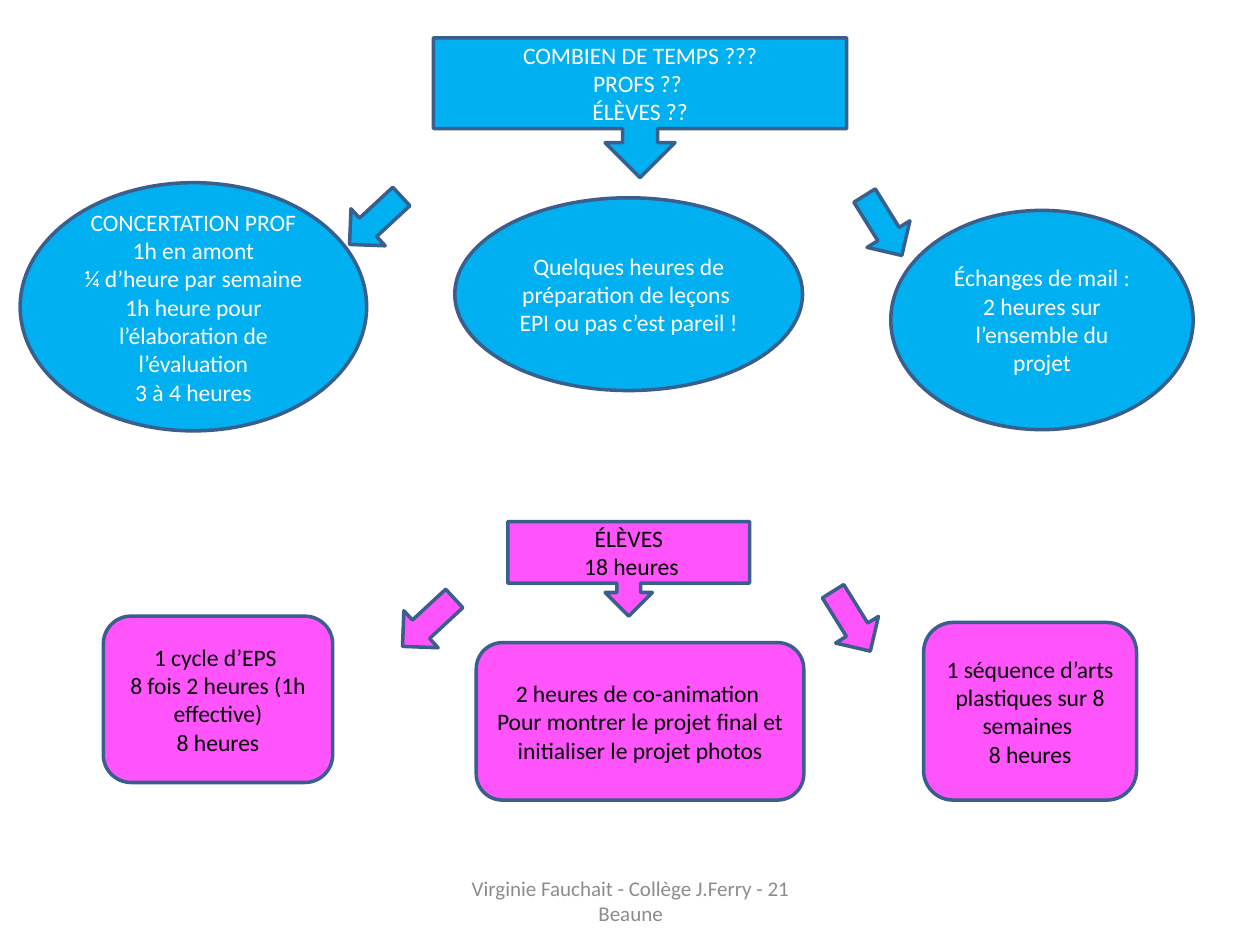
from typing import NamedTuple

import pptx
import pptx.dml.color
import pptx.enum.shapes
import pptx.enum.text
import pptx.util

Inches = pptx.util.Inches
Pt = pptx.util.Pt
Kind = pptx.enum.shapes.MSO_SHAPE

BLUE, PINK, EDGE = "00B0F0", "FF54FC", "3A5F8C"
WHITE, BLACK, GRAY = "FFFFFF", "000000", "8C8C8C"


class Box(NamedTuple):
    kind: Kind
    left: float
    top: float
    width: float
    height: float
    lines: list[str]


class Arrow(NamedTuple):
    left: float
    top: float
    angle: float


class Group(NamedTuple):
    fill: str
    ink: str
    boxes: list[Box]
    arrows: list[Arrow]


GROUPS = [
    Group(BLUE, WHITE, [
        Box(Kind.DOWN_ARROW_CALLOUT, 3.44, 0.3, 3.28, 1.11,
            ["COMBIEN DE TEMPS ???", "PROFS ?? ", "ÉLÈVES ??"]),
        Box(Kind.OVAL, 0.16, 1.45, 2.75, 1.97,
            ["CONCERTATION PROF", "1h en amont", "¼ d’heure par semaine",
             "1h heure pour l’élaboration de l’évaluation", "3 à 4 heures"]),
        Box(Kind.OVAL, 3.61, 1.57, 2.76, 1.53,
            ["Quelques heures de préparation de leçons ",
             "EPI ou pas c’est pareil !"]),
        Box(Kind.OVAL, 7.07, 1.67, 2.4, 1.74,
            ["Échanges de mail :", "2 heures sur l’ensemble du projet"]),
    ], [Arrow(2.78, 1.47, 47.2), Arrow(6.81, 1.51, 328.1)]),
    Group(PINK, BLACK, [
        Box(Kind.DOWN_ARROW_CALLOUT, 4.03, 4.14, 1.92, 0.75,
            ["ÉLÈVES", " 18 heures"]),
        Box(Kind.ROUNDED_RECTANGLE, 0.82, 4.89, 1.82, 1.32,
            ["1 cycle d’EPS ", "8 fois 2 heures (1h effective)", "8 heures"]),
        Box(Kind.ROUNDED_RECTANGLE, 3.78, 5.1, 2.6, 1.25,
            ["2 heures de co-animation ",
             "Pour montrer le projet final et initialiser le projet photos"]),
        Box(Kind.ROUNDED_RECTANGLE, 7.33, 4.94, 1.69, 1.41,
            ["1 séquence d’arts plastiques sur 8 semaines ", "8 heures"]),
    ], [Arrow(3.2, 4.66, 47.2), Arrow(6.56, 4.65, 328.1)]),
]


def paint(color, code: str) -> None:
    color.rgb = pptx.dml.color.RGBColor.from_string(code)


def write(shape, lines: list[str], size: float, ink: str) -> None:
    frame = shape.text_frame
    frame.word_wrap = True
    frame.vertical_anchor = pptx.enum.text.MSO_ANCHOR.MIDDLE
    frame.text = "\n".join(lines)
    for para in frame.paragraphs:
        para.alignment = pptx.enum.text.PP_ALIGN.CENTER
        para.font.name = "Calibri"
        para.font.size = Pt(size)
        paint(para.font.color, ink)


def draw(slide, kind: Kind, place: tuple[float, ...], fill: str):
    """Add a filled, outlined shape at left, top, width, height."""
    shape = slide.shapes.add_shape(kind, *map(Inches, place))
    shape.shadow.inherit = False
    shape.fill.solid()
    paint(shape.fill.fore_color, fill)
    paint(shape.line.color, EDGE)
    shape.line.width = Pt(2)
    return shape


def main() -> None:
    deck = pptx.Presentation()
    deck.slide_width, deck.slide_height = Inches(10), Inches(7.5)
    slide = deck.slides.add_slide(deck.slide_layouts[6])
    for group in GROUPS:
        for box in group.boxes:
            shape = draw(slide, box.kind, box[1:5], group.fill)
            write(shape, box.lines, 13.5, group.ink)
        for arrow in group.arrows:
            place = (arrow.left, arrow.top, 0.4, 0.56)
            draw(slide, Kind.DOWN_ARROW, place, group.fill).rotation = arrow.angle
    footer = slide.shapes.add_textbox(*map(Inches, (3.42, 6.95, 3.17, 0.4)))
    write(footer, ["Virginie Fauchait - Collège J.Ferry - 21 Beaune"], 12, GRAY)
    deck.save("out.pptx")


if __name__ == "__main__":
    main()
